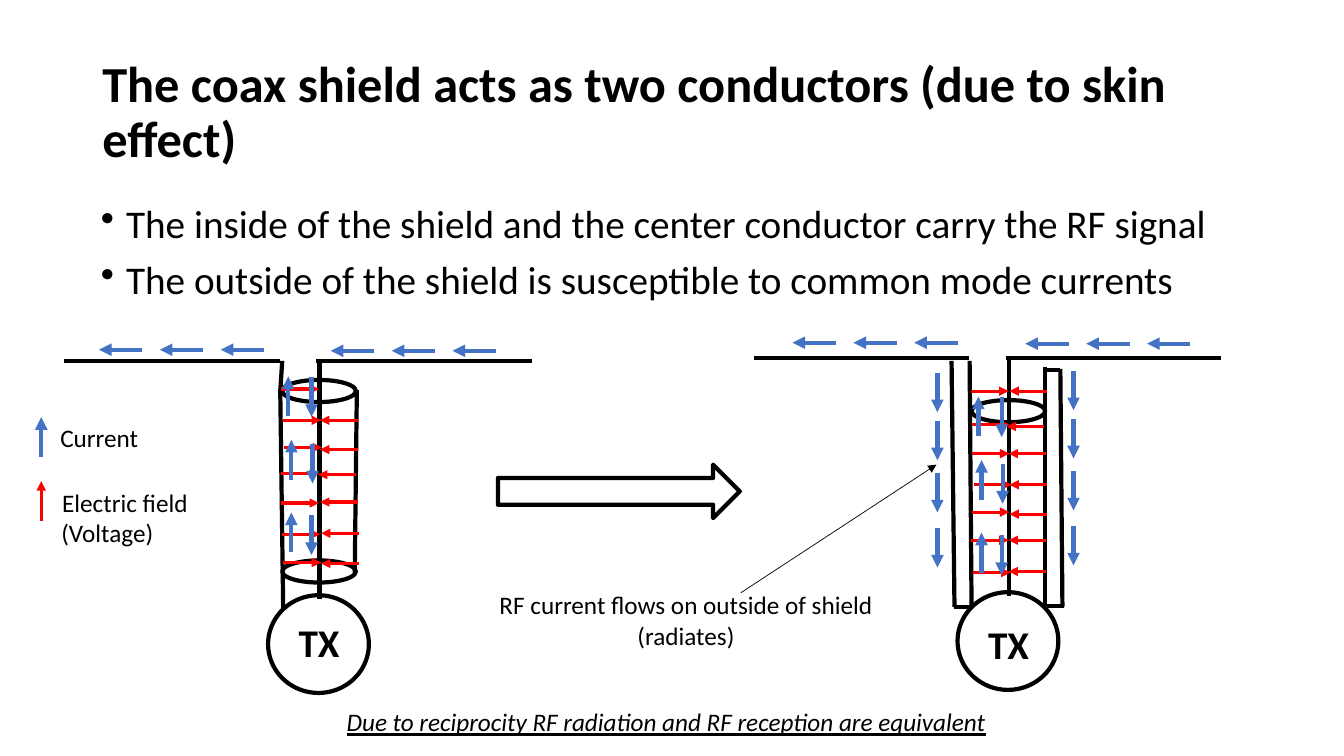
"""Draw a slide on how a coax shield acts as two conductors."""
import dataclasses

import pptx
import pptx.dml.color
import pptx.enum.shapes
import pptx.enum.text
import pptx.oxml
import pptx.oxml.ns
import pptx.util
from lxml import etree

Pt = pptx.util.Pt
Shape = pptx.enum.shapes.MSO_SHAPE
Align = pptx.enum.text.PP_ALIGN
Anchor = pptx.enum.text.MSO_ANCHOR


@dataclasses.dataclass
class Theme:
    font: str = "Calibri"
    ink: str = "000000"
    flow: str = "4472C4"
    field: str = "FF0000"
    title: float = 36
    body: float = 28
    note: float = 18
    bold: float = 3
    mid: float = 2.25
    thin: float = 0.5


class Board:
    def __init__(self, slide, theme):
        self.slide = slide
        self.theme = theme

    def text(self, box, lines, size, align=(), bold=False, slant=False,
             wrap=False, list_=False, space=None, middle=False):
        frame = self.slide.shapes.add_textbox(*map(Pt, box)).text_frame
        frame.word_wrap = wrap
        if middle:
            frame.vertical_anchor = Anchor.MIDDLE
        frame.text = "\n".join(lines)
        for para, side in zip(frame.paragraphs, align or [Align.LEFT] * len(lines)):
            para.alignment = side
            if list_:
                props = para._p.get_or_add_pPr()
                props.set("marL", str(Pt(18)))
                props.set("indent", str(-Pt(18)))
                mark = etree.SubElement(props, pptx.oxml.ns.qn("a:buChar"))
                mark.set("char", "•")
                para.space_before = Pt(10)
            if space:
                para.line_spacing = space
            font = para.font
            font.name = self.theme.font
            font.size = Pt(size)
            font.bold = bold
            font.italic = font.underline = slant
            font.color.rgb = pptx.dml.color.RGBColor.from_string(self.theme.ink)

    def line(self, x1, y1, x2, y2, color=None, width=None, head=False):
        wire = self.slide.shapes.add_connector(
            pptx.enum.shapes.MSO_CONNECTOR.STRAIGHT, Pt(x1), Pt(y1), Pt(x2), Pt(y2))
        self.edge(wire, color or self.theme.ink, width or self.theme.bold)
        if head:
            tip = etree.SubElement(wire.line._get_or_add_ln(), pptx.oxml.ns.qn("a:tailEnd"))
            tip.set("type", "triangle")
        etree.SubElement(wire._element.spPr, pptx.oxml.ns.qn("a:effectLst"))

    def edge(self, shape, color, width):
        shape.line.color.rgb = pptx.dml.color.RGBColor.from_string(color)
        shape.line.width = Pt(width)

    def shape(self, kind, *box):
        item = self.slide.shapes.add_shape(kind, *map(Pt, box))
        item.shadow.inherit = False
        item.fill.background()
        self.edge(item, self.theme.ink, self.theme.bold)

    def flow(self, x, y, dx, dy):
        self.line(x, y, x + dx, y + dy, self.theme.flow, self.theme.bold, True)

    def field(self, x, y, dx, dy=0):
        self.line(x, y, x + dx, y + dy, self.theme.field, self.theme.mid, True)

    def aerial(self, x, y, label):
        for left in (x, x + 180):
            self.line(left, y, left + 154, y)
        self.line(x + 182.2, y, x + 182.2, y + 170.2)
        self.shape(Shape.OVAL, x + 145.5, y + 167.4, 72, 69.8)
        self.text((x + 160.2, label, 43.9, 41), ["TX"], self.theme.body, bold=True)


def draw(board):
    theme = board.theme
    board.text((66, 29, 828, 104.4),
               ["The coax shield acts as two conductors (due to skin effect)"],
               theme.title, bold=True, wrap=True, space=0.9, middle=True)
    board.text((65, 142.5, 828, 342.7),
               ["The inside of the shield and the center conductor carry the RF signal",
                "The outside of the shield is susceptible to common mode currents"],
               theme.body, wrap=True, list_=True, space=0.9)

    board.aerial(46, 257.8, 437.8)
    board.aerial(538.5, 255.6, 439.2)
    shields = [
        (201.6, 257.8, 200.2, 279.4), (200.2, 279.4, 202.3, 434.9),
        (254.9, 278.6, 253.4, 409),
        (692.6, 257.8, 694, 433.4), (679.7, 257.8, 681.8, 433.4),
        (694, 433.4, 681.8, 433.4),
        (746.6, 262, 746.6, 432.7), (757.4, 263.5, 758.9, 433.4),
        (757.4, 264.2, 745.2, 264.2), (760.3, 432.7, 748, 432.7),
    ]
    for ends in shields:
        board.line(*ends)
    for x, y in [(201.6, 271.4), (201.6, 400.3), (694, 285.8)]:
        board.shape(Shape.OVAL, x, y, 52.6, 15.8)
    board.shape(Shape.RIGHT_ARROW, 355.7, 331.9, 172.8, 38.2)

    inward = {
        27: [(200.9, 277.9), (202.3, 300.2), (203, 319.7), (200.9, 338.4),
             (200.9, 359.3), (201.6, 381.6), (202.3, 401.8),
             (693.4, 279.4), (694, 303.1), (694, 324), (695.5, 346.3),
             (694, 365.8), (693.4, 385.9), (694.8, 409)],
        -27: [(255.6, 300.2), (255.6, 321.1), (254.2, 339.1), (255.6, 358.6),
              (256.3, 380.9), (256.3, 402.5),
              (748, 279.4), (745.9, 304.6), (747.4, 324), (748, 346.3),
              (748, 367.2), (747.4, 385.9), (747.4, 408.2)],
    }
    for run, tails in inward.items():
        for x, y in tails:
            board.field(x, y, run)

    for x, y in [(188.6, 249.8), (354.2, 250.6), (684, 244.8), (850.3, 245.5)]:
        for step in range(3):
            board.flow(x - 43.5 * step, y, -30.9, 0)
    inner = {
        -28.5: [(205.9, 297.4), (208.1, 342.7), (208.1, 394.6)],
        28.5: [(222.5, 269.3), (223.2, 316.8), (222.5, 367.9)],
    }
    for dx, dy in [(0, 0), (493, 14.4)]:
        for run, tails in inner.items():
            for x, y in tails:
                board.flow(x + dx, y + dy, 0, run)
    for x, top in [(669.6, 266.4), (766.8, 265)]:
        for drop in (0, 34.4, 71.6, 110.9):
            board.flow(x, top + drop, 0, 28)

    board.flow(29.5, 326.5, 0, -28.5)
    board.field(29.5, 372.2, 0, -28.5)
    board.text((36, 298, 70.6, 29), ["Current"], theme.note)
    board.text((36.7, 344.2, 105.1, 51), ["Electric field", "(Voltage)"], theme.note,
               align=[Align.CENTER, Align.LEFT])
    board.text((347.8, 417.6, 284.4, 51),
               ["RF current flows on outside of shield", "(radiates)"], theme.note,
               align=[Align.CENTER] * 2)
    board.text((240.5, 501.1, 478.8, 29),
               ["Due to reciprocity RF radiation and RF reception are equivalent"],
               theme.note, slant=True)
    board.line(529.2, 423.4, 668.9, 331.9, theme.ink, theme.thin, True)


def main():
    deck = pptx.Presentation()
    deck.slide_width, deck.slide_height = Pt(960), Pt(540)
    draw(Board(deck.slides.add_slide(deck.slide_layouts[6]), Theme()))
    deck.save("out.pptx")


if __name__ == "__main__":
    main()
